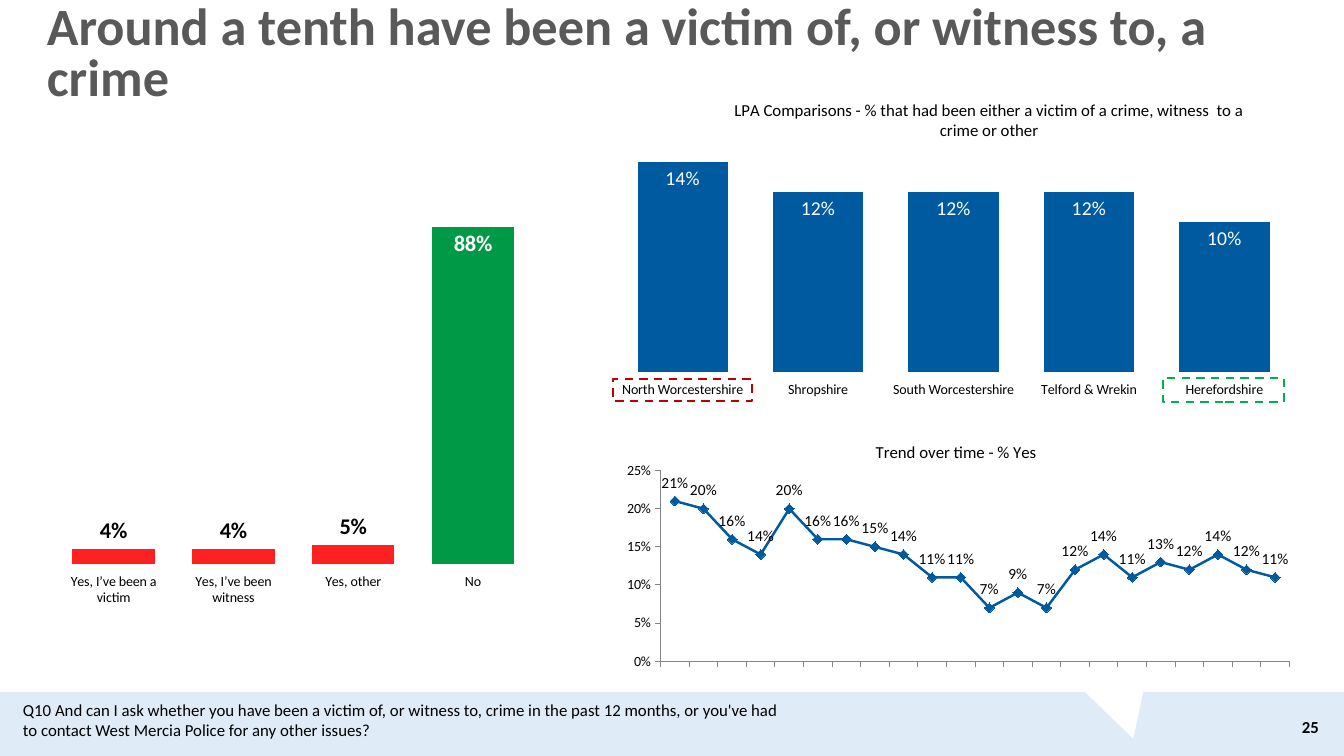
from dataclasses import dataclass, field
from typing import Any, Optional

from lxml import etree
from pptx import Presentation
from pptx.chart.data import CategoryChartData
from pptx.dml.color import RGBColor
from pptx.enum.chart import XL_CHART_TYPE, XL_LABEL_POSITION, XL_MARKER_STYLE
from pptx.enum.chart import XL_TICK_LABEL_POSITION, XL_TICK_MARK
from pptx.enum.dml import MSO_LINE
from pptx.enum.shapes import MSO_SHAPE
from pptx.enum.text import MSO_ANCHOR, MSO_AUTO_SIZE, PP_ALIGN
from pptx.oxml.ns import qn
from pptx.util import Pt

RECT, WEDGE = MSO_SHAPE.RECTANGLE, MSO_SHAPE.ISOSCELES_TRIANGLE
BARS, LINE = XL_CHART_TYPE.COLUMN_CLUSTERED, XL_CHART_TYPE.LINE_MARKERS
ABOVE, OUT_END, IN_END = XL_LABEL_POSITION.ABOVE, XL_LABEL_POSITION.OUTSIDE_END, XL_LABEL_POSITION.INSIDE_END
DIAMOND, DASH = XL_MARKER_STYLE.DIAMOND, MSO_LINE.DASH
TICK_OUT, TICK_NONE, NO_LABELS = XL_TICK_MARK.OUTSIDE, XL_TICK_MARK.NONE, XL_TICK_LABEL_POSITION.NONE
TOP, MIDDLE = MSO_ANCHOR.TOP, MSO_ANCHOR.MIDDLE
LEFT, RIGHT = PP_ALIGN.LEFT, PP_ALIGN.RIGHT
GROW, FIXED = MSO_AUTO_SIZE.SHAPE_TO_FIT_TEXT, MSO_AUTO_SIZE.NONE

BLACK = RGBColor(0x00, 0x00, 0x00)
WHITE = RGBColor(0xFF, 0xFF, 0xFF)
GREY = RGBColor(0x59, 0x59, 0x59)
AXIS = RGBColor(0x86, 0x86, 0x86)
PALE = RGBColor(0xDF, 0xEB, 0xF7)
BLUE = RGBColor(0x00, 0x5A, 0xA0)
GREEN = RGBColor(0x00, 0x9A, 0x46)
RED = RGBColor(0xFF, 0x21, 0x21)
DARK_RED = RGBColor(0xC0, 0x00, 0x00)
LIME = RGBColor(0x00, 0xB0, 0x50)

FACE = "Calibri"
SCALE = 914400 / 100.8
Box = tuple[int, int, int, int]


@dataclass
class Panel:
    box: Box
    fill: Optional[RGBColor] = None
    edge: Optional[RGBColor] = None
    kind: Any = RECT
    turn: float = 0


@dataclass
class Note:
    box: Box
    text: str
    size: float = 12
    color: RGBColor = BLACK
    bold: bool = False
    frame: dict = field(default_factory=dict)
    para: dict = field(default_factory=dict)


@dataclass
class Graph:
    box: Box
    kind: Any
    names: list[str]
    values: list[int]
    color: RGBColor
    inner: dict
    label: dict
    font: dict
    scale: dict
    gap: int = 0
    title: str = ""
    place: dict = field(default_factory=dict)


PANELS = [
    Panel((0, 692, 1344, 64), PALE),
    Panel((1084, 670, 78, 70), WHITE, kind=WEDGE, turn=163.1),
]
MARKS = [
    Panel((613, 379, 139, 22), edge=DARK_RED),
    Panel((1163, 378, 121, 24), edge=LIME),
]
NOTES = [
    Note((1272, 707, 57, 40), "25", bold=True,
         frame={"vertical_anchor": MIDDLE}, para={"alignment": RIGHT}),
    Note((13, 695, 787, 50), "Q10 And can I ask whether you have been a victim of, or witness to, "
         "crime in the past 12 months, or you've had to contact West Mercia Police for any other issues?",
         frame={"auto_size": GROW}),
    Note((37, 17, 1293, 78), "Around a tenth have been a victim of, or witness to, a crime",
         37.4, GREY, True, {"vertical_anchor": MIDDLE}, {"line_spacing": 0.8}),
]
VICTIMS = Graph(
    (44, 172, 489, 446), BARS,
    ["Yes, I’ve been a victim", "Yes, I’ve been witness", "Yes, other", "No"],
    [4, 4, 5, 88], GREEN, {"x": 0.02, "y": 0.02, "w": 0.98, "h": 0.86},
    {"position": OUT_END}, {"size": Pt(16), "bold": True, "color": BLACK},
    {"minimum_scale": 0, "maximum_scale": 1, "visible": False}, 45)
AREAS = Graph(
    (615, 96, 684, 321), BARS,
    ["North Worcestershire", "Shropshire", "South Worcestershire", "Telford & Wrekin", "Herefordshire"],
    [14, 12, 12, 12, 10], BLUE, {"x": 0, "y": 0.16, "w": 0.99, "h": 0.7},
    {"position": IN_END}, {"size": Pt(14), "color": WHITE},
    {"minimum_scale": 0, "maximum_scale": 0.15, "major_unit": 0.01, "visible": False}, 50,
    "LPA Comparisons - % that had been either a victim of a crime, witness  to a crime or other",
    {"x": 0.17, "y": 0})
RATES = [21, 20, 16, 14, 20, 16, 16, 15, 14, 11, 11, 7, 9, 7, 12, 14, 11, 13, 12, 14, 12, 11]
TREND = Graph(
    (606, 433, 684, 251), LINE, [""] * len(RATES), RATES,
    BLUE, {"x": 0.08, "y": 0.15, "w": 0.92, "h": 0.76},
    {"position": ABOVE}, {"size": Pt(11), "color": BLACK},
    {"minimum_scale": 0, "maximum_scale": 0.25, "major_unit": 0.05},
    title="Trend over time - % Yes", place={"x": 0.39, "y": 0.02})


def px(n: int) -> int:
    return round(n * SCALE)


def put(item: Any, vals: dict) -> None:
    for key, val in vals.items():
        if key == "color":
            item.color.rgb = val
        else:
            setattr(item, key, val)


def paint(item: Any, color: RGBColor) -> None:
    item.fill.solid()
    item.fill.fore_color.rgb = color


def lay(node: Any, slot: int, vals: dict) -> None:
    for old in node.findall(qn("c:layout")):
        node.remove(old)
    out = etree.Element(qn("c:layout"))
    node.insert(slot, out)
    man = etree.SubElement(out, qn("c:manualLayout"))
    for key, val in vals.items():
        etree.SubElement(man, qn(f"c:{key}")).set("val", str(val))


def add_panel(slide: Any, panel: Panel) -> None:
    shape = slide.shapes.add_shape(panel.kind, *map(px, panel.box))
    shape.shadow.inherit = False
    shape.rotation = panel.turn
    if panel.fill is None:
        shape.fill.background()
    else:
        paint(shape, panel.fill)
    if panel.edge is None:
        shape.line.fill.background()
    else:
        put(shape.line, {"color": panel.edge, "width": Pt(1.5), "dash_style": DASH})


def add_note(slide: Any, note: Note) -> None:
    frame = slide.shapes.add_textbox(*map(px, note.box)).text_frame
    put(frame, {"word_wrap": True, "auto_size": FIXED, "vertical_anchor": TOP} | note.frame)
    para = frame.paragraphs[0]
    put(para, {"alignment": LEFT} | note.para)
    run = para.add_run()
    run.text = note.text
    put(run.font, {"name": FACE, "size": Pt(note.size), "bold": note.bold, "color": note.color})


def add_graph(slide: Any, graph: Graph) -> Any:
    data = CategoryChartData(number_format="0%")
    data.categories = graph.names
    data.add_series("", [val / 100 for val in graph.values])
    chart = slide.shapes.add_chart(graph.kind, *map(px, graph.box), data).chart
    put(chart, {"has_legend": False, "has_title": bool(graph.title)})
    put(chart.font, {"name": FACE, "size": Pt(10), "color": BLACK})
    edge = {"xMode": "edge", "yMode": "edge"}
    if graph.title:
        title = chart.chart_title
        title.text_frame.text = graph.title
        put(title.text_frame.paragraphs[0].runs[0].font,
            {"name": FACE, "size": Pt(12), "bold": False, "color": BLACK})
        lay(title._element, 1, edge | graph.place)
    plot, series = chart.plots[0], chart.plots[0].series[0]
    plot.vary_by_categories = False
    put(series.data_labels, {"show_value": True, "number_format": "0%",
                             "number_format_is_linked": False} | graph.label)
    put(series.data_labels.font, {"name": FACE} | graph.font)
    cat, val = chart.category_axis, chart.value_axis
    put(cat, {"major_tick_mark": TICK_OUT, "minor_tick_mark": TICK_NONE, "has_major_gridlines": False})
    put(val, {"major_tick_mark": TICK_OUT, "minor_tick_mark": TICK_NONE,
              "has_major_gridlines": False} | graph.scale)
    put(val.tick_labels, {"number_format": "0%", "number_format_is_linked": False})
    if graph.kind == BARS:
        plot.gap_width = graph.gap
        paint(series.format, graph.color)
        cat.format.line.fill.background()
    else:
        cat.tick_label_position = NO_LABELS
        for axis in (cat, val):
            put(axis.format.line, {"color": AXIS, "width": Pt(0.75)})
        series.smooth = False
        put(series.format.line, {"color": graph.color, "width": Pt(1.75)})
        put(series.marker, {"style": DIAMOND, "size": 7})
        paint(series.marker.format, graph.color)
        series.marker.format.line.color.rgb = graph.color
    lay(chart._chartSpace.chart.plotArea, 0, {"layoutTarget": "inner"} | edge | graph.inner)
    return chart


def tint_yes(chart: Any) -> None:
    points = chart.plots[0].series[0].points
    for i in range(3):
        paint(points[i].format, RED)
    label = points[3].data_label
    put(label.font, {"name": FACE, "size": Pt(16), "bold": True, "color": WHITE})
    label.position = IN_END


def main() -> None:
    deck = Presentation()
    put(deck, {"slide_width": px(1344), "slide_height": px(756)})
    slide = deck.slides.add_slide(deck.slide_layouts[6])
    for panel in PANELS:
        add_panel(slide, panel)
    for note in NOTES:
        add_note(slide, note)
    tint_yes(add_graph(slide, VICTIMS))
    add_graph(slide, AREAS)
    for mark in MARKS:
        add_panel(slide, mark)
    add_graph(slide, TREND)
    deck.save("out.pptx")


if __name__ == "__main__":
    main()
